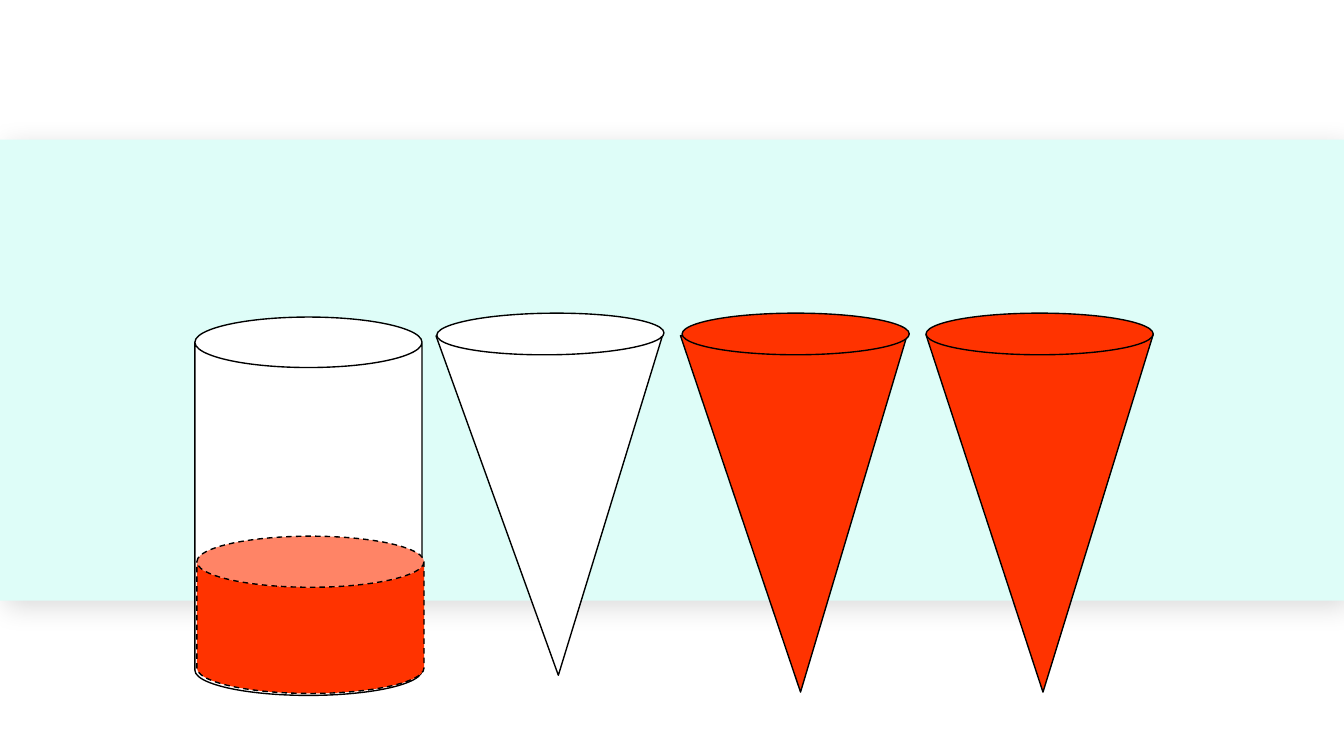
from dataclasses import dataclass

from lxml import etree
from pptx import Presentation
from pptx import util as u
from pptx.dml.color import RGBColor
from pptx.enum import dml, shapes
from pptx.oxml.ns import qn

PX = 4572  # EMU per px, 200 px to the inch
SHAPE = shapes.MSO_SHAPE


@dataclass(frozen=True)
class Theme:
    band: str = "DEFDF8"
    liquid: str = "FF3300"
    empty: str = "FFFFFF"
    outline: str = "000000"
    outline_pt: float = 0.75


THEME = Theme()


def add_shape(parent, kind, box, fill, rotation=0, adj=None, outlined=True):
    sp = parent.shapes.add_shape(kind, *(v * PX for v in box))
    sp.shadow.inherit = False
    sp.rotation = rotation
    sp.fill.solid()
    sp.fill.fore_color.rgb = RGBColor.from_string(fill)
    if adj is not None:
        sp.adjustments[0] = adj
    if outlined:
        sp.line.color.rgb = RGBColor.from_string(THEME.outline)
        sp.line.width = u.Pt(THEME.outline_pt)
    else:
        sp.line.fill.background()
    return sp


def add_soft_shadow(sp, alpha, blur, distance, angle):
    """Alpha in percent, blur and distance in points, angle in degrees."""
    effects = sp._element.spPr.find(qn("a:effectLst"))
    shadow = etree.SubElement(
        effects, qn("a:outerShdw"), blurRad=str(u.Pt(blur)),
        dist=str(u.Pt(distance)), dir=str(angle * 60000),
        algn="ctr", rotWithShape="0")
    color = etree.SubElement(shadow, qn("a:srgbClr"), val=THEME.outline)
    etree.SubElement(color, qn("a:alpha"), val=str(alpha * 1000))


def add_band(s, box):
    sp = add_shape(s, SHAPE.RECTANGLE, box, THEME.band, outlined=False)
    add_soft_shadow(sp, alpha=15, blur=15, distance=5, angle=45)


def add_cone(s, box, fill, tilt=180, rim_tilt=0, apex=0.485, rim_shift=0):
    """Point-down cone whose rim is centred on the top edge of its body."""
    x, y, w, h = box
    rim_h = 62
    body_top = rim_h // 2 + 1
    grp = s.shapes.add_group_shape()
    add_shape(grp, SHAPE.ISOSCELES_TRIANGLE,
              (x, y + body_top, w, h - body_top), fill, tilt, apex)
    add_shape(grp, SHAPE.OVAL, (x + rim_shift, y, w, rim_h), fill, rim_tilt)


def add_cylinder(s, box, level):
    """Glass cylinder with liquid up to the given height."""
    x, y, w, h = box
    grp = s.shapes.add_group_shape()
    add_shape(grp, SHAPE.CAN, box, THEME.empty, adj=0.222)
    liquid = add_shape(grp, SHAPE.CAN, (x + 3, y + h - level - 3, w, level),
                       THEME.liquid, adj=0.325)
    liquid.line.dash_style = dml.MSO_LINE.DASH


def main():
    prs = Presentation()
    prs.slide_width, prs.slide_height = 2000 * PX, 1125 * PX
    s = prs.slides.add_slide(prs.slide_layouts[6])

    add_band(s, (0, 208, 2000, 686))
    add_cone(s, (1015, 466, 338, 564), THEME.liquid, tilt=179.5)
    add_cone(s, (1378, 466, 338, 564), THEME.liquid)
    add_cone(s, (652, 466, 338, 539), THEME.empty, tilt=179.3,
             rim_tilt=179.4, apex=0.48, rim_shift=-2)
    add_cylinder(s, (290, 472, 338, 563), level=234)

    prs.save("out.pptx")


if __name__ == "__main__":
    main()
